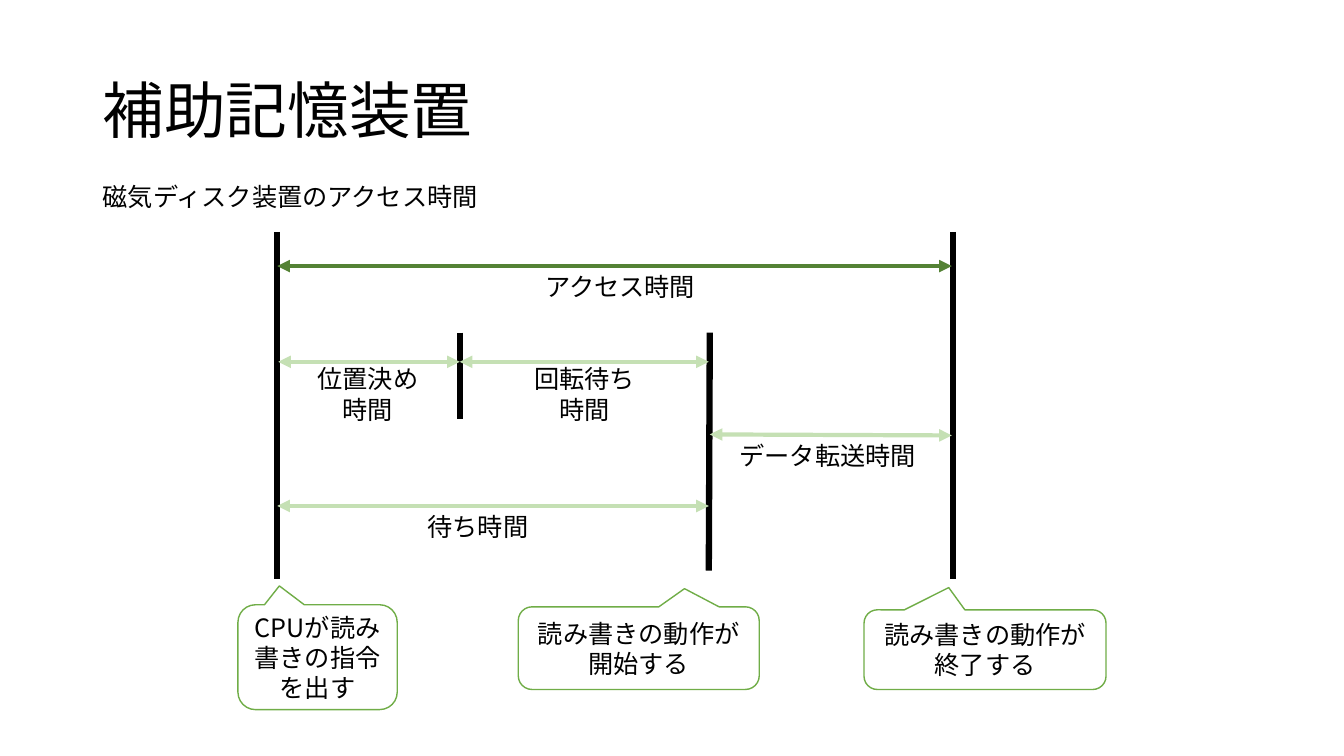
from dataclasses import dataclass

from lxml import etree
from pptx import Presentation
from pptx.dml.color import RGBColor
from pptx.enum.shapes import MSO_CONNECTOR, MSO_SHAPE
from pptx.enum.text import MSO_ANCHOR, PP_ALIGN
from pptx.oxml.ns import qn
from pptx.util import Inches, Pt

LINE = MSO_CONNECTOR.STRAIGHT
BUBBLE = MSO_SHAPE.ROUNDED_RECTANGULAR_CALLOUT
LEFT, CENTER = PP_ALIGN.LEFT, PP_ALIGN.CENTER
TOP, MIDDLE = MSO_ANCHOR.TOP, MSO_ANCHOR.MIDDLE
FONT = "Noto Sans CJK JP"
BLACK, WHITE = "000000", "FFFFFF"
DARK, PALE, GREEN = "548235", "C5E0B4", "70AD47"
START, SEEK, READY, END = 2.75, 4.56, 7.04, 9.45


@dataclass
class Stroke:
    x1: float
    y1: float
    x2: float
    y2: float
    color: str = BLACK
    width: float = 4.5
    arrow: bool = False


@dataclass
class Label:
    left: float
    top: float
    text: str


@dataclass
class Callout:
    left: float
    top: float
    width: float
    height: float
    tip: tuple[float, float]
    text: str


def span(x1: float, x2: float, y: float, color: str = PALE, drop: float = 0) -> Stroke:
    return Stroke(x1, y, x2, y + drop, color, 3, True)


BARS = [
    Stroke(START, 2.3, START, 5.74),
    Stroke(SEEK, 3.3, SEEK, 4.16),
    Stroke(READY, 3.3, READY - 0.01, 5.66),
    Stroke(END, 2.3, END, 5.74),
]
SPANS = [
    span(START, END - 0.01, 2.64, DARK),
    span(READY, END - 0.01, 4.31, drop=0.01),
    span(START, READY - 0.01, 5.02),
    span(SEEK, READY - 0.01, 3.59),
    span(START + 0.01, SEEK, 3.59),
]
LABELS = [
    Label(5.17, 2.64, "アクセス時間"),
    Label(4.82, 3.56, "回転待ち\n時間"),
    Label(2.67, 3.56, "位置決め\n時間"),
    Label(3.76, 5.02, "待ち時間"),
    Label(7.23, 4.32, "データ転送時間"),
]
CALLOUTS = [
    Callout(2.36, 6, 1.58, 1.04, (-0.24, -0.68), "CPUが読み書きの指令を出す"),
    Callout(5.14, 6.02, 2.39, 0.82, (0.19, -0.72), "読み書きの動作が開始する"),
    Callout(8.57, 6.05, 2.4, 0.79, (-0.15, -0.78), "読み書きの動作が終了する"),
]


def paint(code: str) -> RGBColor:
    return RGBColor.from_string(code)


def write(shape, text: str, *, size: float = 18, align=CENTER, anchor=TOP,
          space: float = 1, before: float = 0) -> None:
    frame = shape.text_frame
    frame.word_wrap = True
    frame.vertical_anchor = anchor
    frame.text = text
    for para in frame.paragraphs:
        para.alignment = align
        para.line_spacing = space
        para.space_before = Pt(before)
        for run in para.runs:
            run.font.size = Pt(size)
            run.font.color.rgb = paint(BLACK)
            run.font.name = FONT
            props = run._r.get_or_add_rPr()
            props.set("lang", "ja-JP")
            etree.SubElement(props, qn("a:ea"), typeface=FONT)


def add_box(slide, left: float, top: float, width: float, height: float):
    return slide.shapes.add_textbox(
        Inches(left), Inches(top), Inches(width), Inches(height))


def draw_line(slide, item: Stroke) -> None:
    line = slide.shapes.add_connector(
        LINE, Inches(item.x1), Inches(item.y1), Inches(item.x2), Inches(item.y2))
    line.line.color.rgb = paint(item.color)
    line.line.width = Pt(item.width)
    if item.arrow:
        edge = line.line._get_or_add_ln()
        for end in ("a:headEnd", "a:tailEnd"):
            etree.SubElement(edge, qn(end), type="triangle")
    etree.SubElement(line._element.spPr, qn("a:effectLst"))


def draw_call(slide, item: Callout) -> None:
    shape = slide.shapes.add_shape(
        BUBBLE, Inches(item.left), Inches(item.top),
        Inches(item.width), Inches(item.height))
    shape.shadow.inherit = False
    shape.adjustments[0], shape.adjustments[1] = item.tip
    shape.fill.solid()
    shape.fill.fore_color.rgb = paint(WHITE)
    shape.line.color.rgb = paint(GREEN)
    shape.line.width = Pt(1)
    write(shape, item.text, anchor=MIDDLE)


def main() -> None:
    deck = Presentation()
    deck.slide_width, deck.slide_height = Inches(13.33), Inches(7.5)
    slide = deck.slides.add_slide(deck.slide_layouts[6])
    write(add_box(slide, 0.92, 0.4, 11.5, 1.45), "補助記憶装置",
          size=44, align=LEFT, anchor=MIDDLE, space=0.9)
    write(add_box(slide, 0.92, 1.78, 11.5, 4.76), "磁気ディスク装置のアクセス時間",
          align=LEFT, space=0.9, before=10)
    for item in BARS + SPANS:
        draw_line(slide, item)
    for item in LABELS:
        height = 0.4 + 0.31 * item.text.count("\n")
        write(add_box(slide, item.left, item.top, 1.96, height), item.text)
    for item in CALLOUTS:
        draw_call(slide, item)
    deck.save("out.pptx")


if __name__ == "__main__":
    main()
